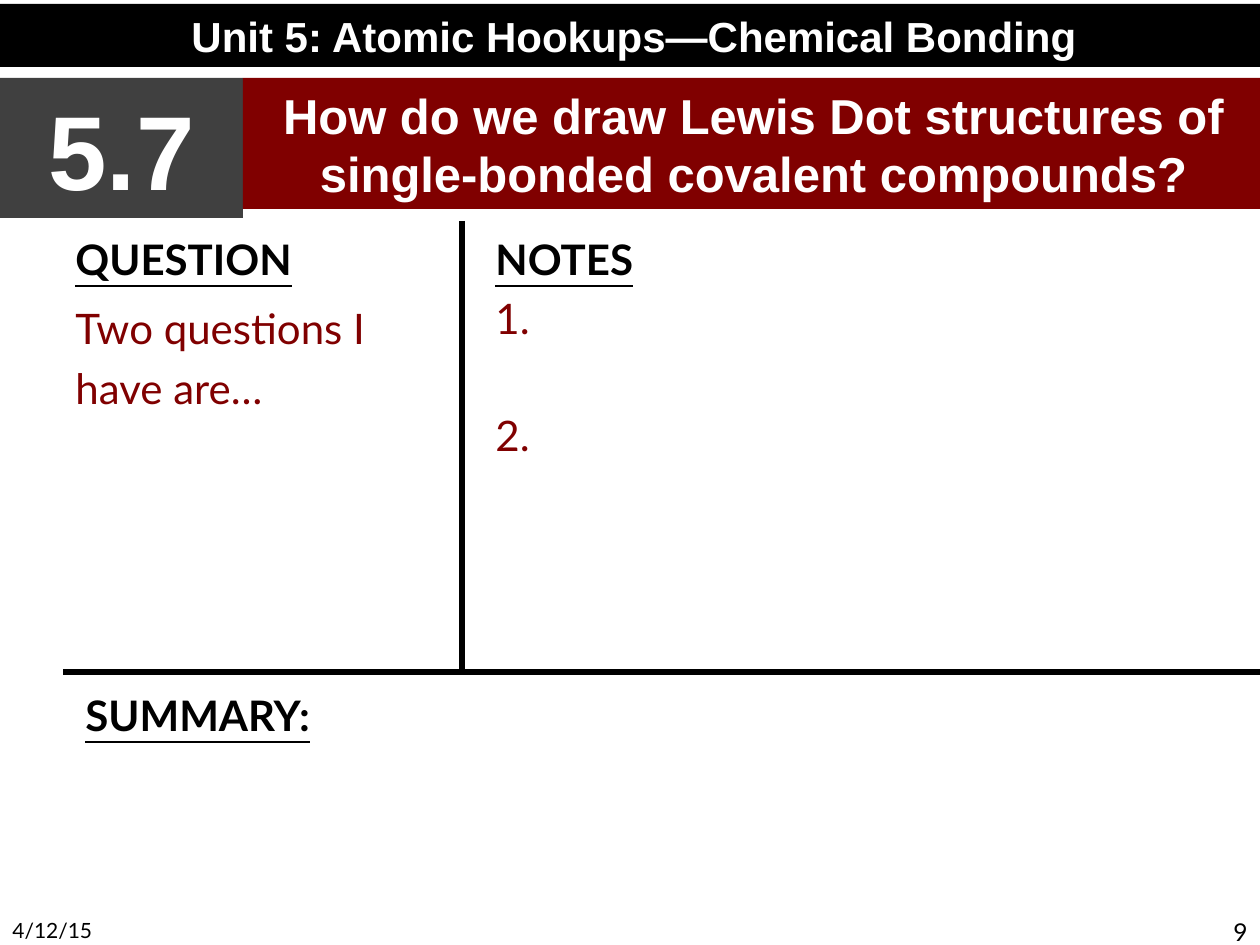
from lxml import etree
from pptx import Presentation
from pptx.dml.color import RGBColor
from pptx.enum.shapes import MSO_CONNECTOR as Connector, MSO_SHAPE as Preset
from pptx.enum.text import MSO_ANCHOR as Anchor, PP_ALIGN as Align
from pptx.oxml.ns import qn
from pptx.util import Pt

EMU_PER_PX = 914400 / 126
BLACK, WHITE, GRAY, MAROON = "000000", "FFFFFF", "404040", "800000"


def px(length):
    return round(length * EMU_PER_PX)


def color(code):
    return RGBColor.from_string(code)


class NotesSlide:
    heading_font = "Arial"
    body_font = "Lato"
    body_size = 24
    rule_width = 3

    def __init__(self, deck):
        self.slide = deck.slides.add_slide(deck.slide_layouts[6])

    def add_words(self, paragraph, wording, font, size, ink, bold=False, underline=False):
        run = paragraph.add_run()
        run.text = wording
        run.font.name = font
        run.font.size = Pt(size)
        run.font.bold = bold
        run.font.underline = underline
        run.font.color.rgb = color(ink)

    def frame(self, left, top, width, height):
        box = self.slide.shapes.add_textbox(px(left), px(top), px(width), px(height))
        box.text_frame.word_wrap = True
        return box.text_frame

    def banner(self, wording, size, fill, left, top, width, height):
        bar = self.slide.shapes.add_shape(
            Preset.RECTANGLE, px(left), px(top), px(width), px(height))
        bar.shadow.inherit = False
        bar.fill.solid()
        bar.fill.fore_color.rgb = color(fill)
        bar.line.fill.background()
        bar.text_frame.word_wrap = True
        bar.text_frame.vertical_anchor = Anchor.BOTTOM
        title = bar.text_frame.paragraphs[0]
        title.alignment = Align.CENTER
        self.add_words(title, wording, self.heading_font, size, WHITE, bold=True)

    def section(self, heading, left, top, width, height, entries=(), gap=5, spacing=1.0):
        frame = self.frame(left, top, width, height)
        self.add_words(frame.paragraphs[0], heading, self.body_font, self.body_size,
                       BLACK, bold=True, underline=True)
        for index, entry in enumerate(entries):
            paragraph = frame.add_paragraph()
            paragraph.space_before = Pt(gap if index else 5)
            paragraph.line_spacing = spacing
            self.add_words(paragraph, entry, self.body_font, self.body_size, MAROON)

    def footer(self, wording, size, left, align):
        paragraph = self.frame(left, 911, 294, 34).paragraphs[0]
        paragraph.alignment = align
        self.add_words(paragraph, wording, self.body_font, size, BLACK)

    def rule(self, x1, y1, x2, y2):
        divider = self.slide.shapes.add_connector(
            Connector.STRAIGHT, px(x1), px(y1), px(x2), px(y2))
        divider.line.color.rgb = color(BLACK)
        divider.line.width = Pt(self.rule_width)
        etree.SubElement(divider._element.spPr, qn("a:effectLst"))


def main():
    deck = Presentation()
    deck.slide_width, deck.slide_height = px(1260), px(945)
    page = NotesSlide(deck)

    page.footer("4/12/15", 12, 0, Align.LEFT)
    page.footer("9", 14, 966, Align.RIGHT)

    page.banner("Unit 5: Atomic Hookups—Chemical Bonding", 24, BLACK, 0, 4, 1268, 63)
    page.banner("5.7", 60, GRAY, 0, 78, 243, 140)
    page.banner("How do we draw Lewis Dot structures of single-bonded covalent compounds?",
                28, MAROON, 243, 78, 1021, 131)

    page.section("QUESTION", 63, 227, 399, 435, ["Two questions I have are…"], spacing=1.2)
    page.section("NOTES", 483, 227, 777, 435, ["1.", "2."], gap=38.4)
    page.section("SUMMARY:", 73, 683, 1187, 262)

    page.rule(462, 221, 462, 672)
    page.rule(1260, 672, 63, 672)

    deck.save("out.pptx")


if __name__ == "__main__":
    main()
